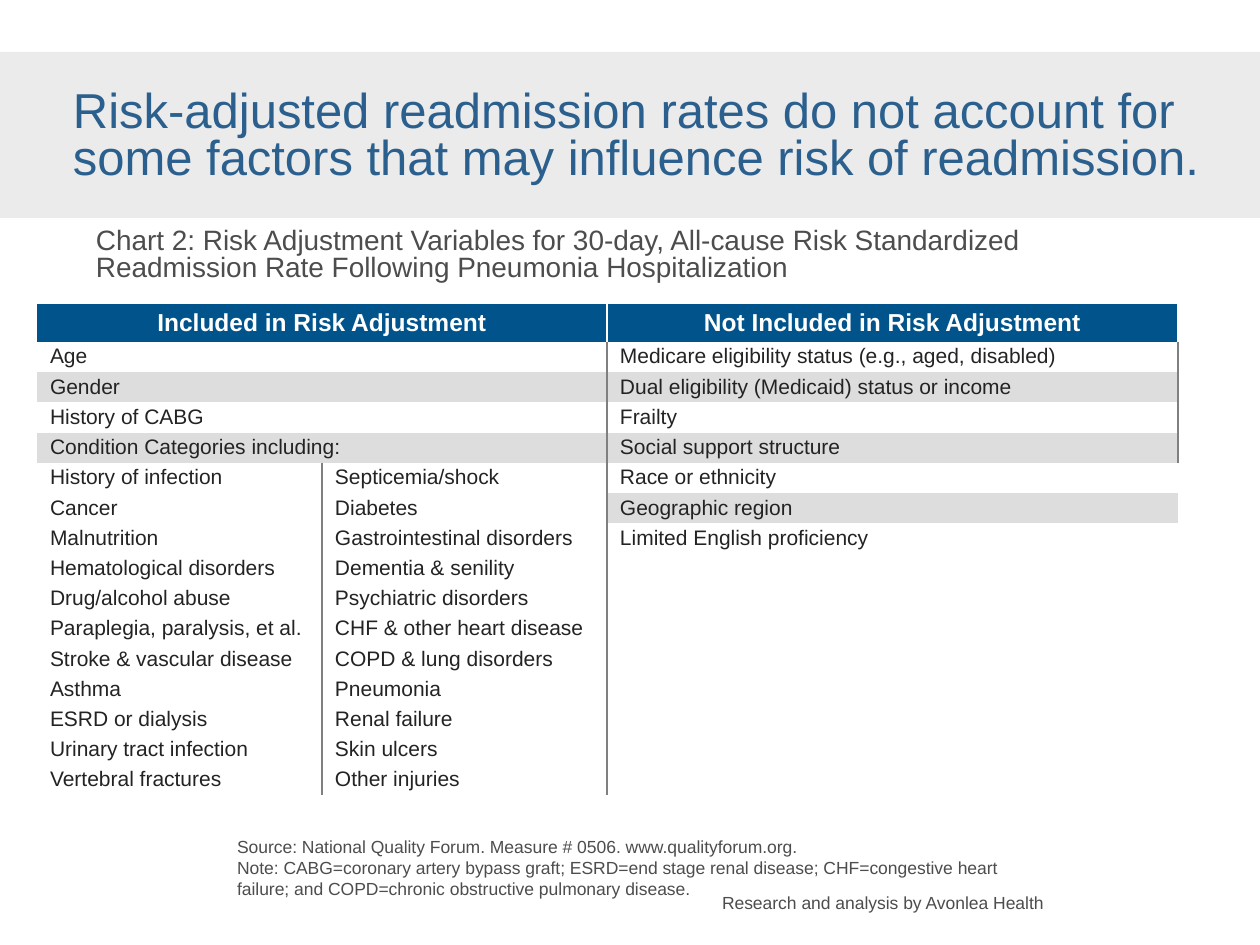
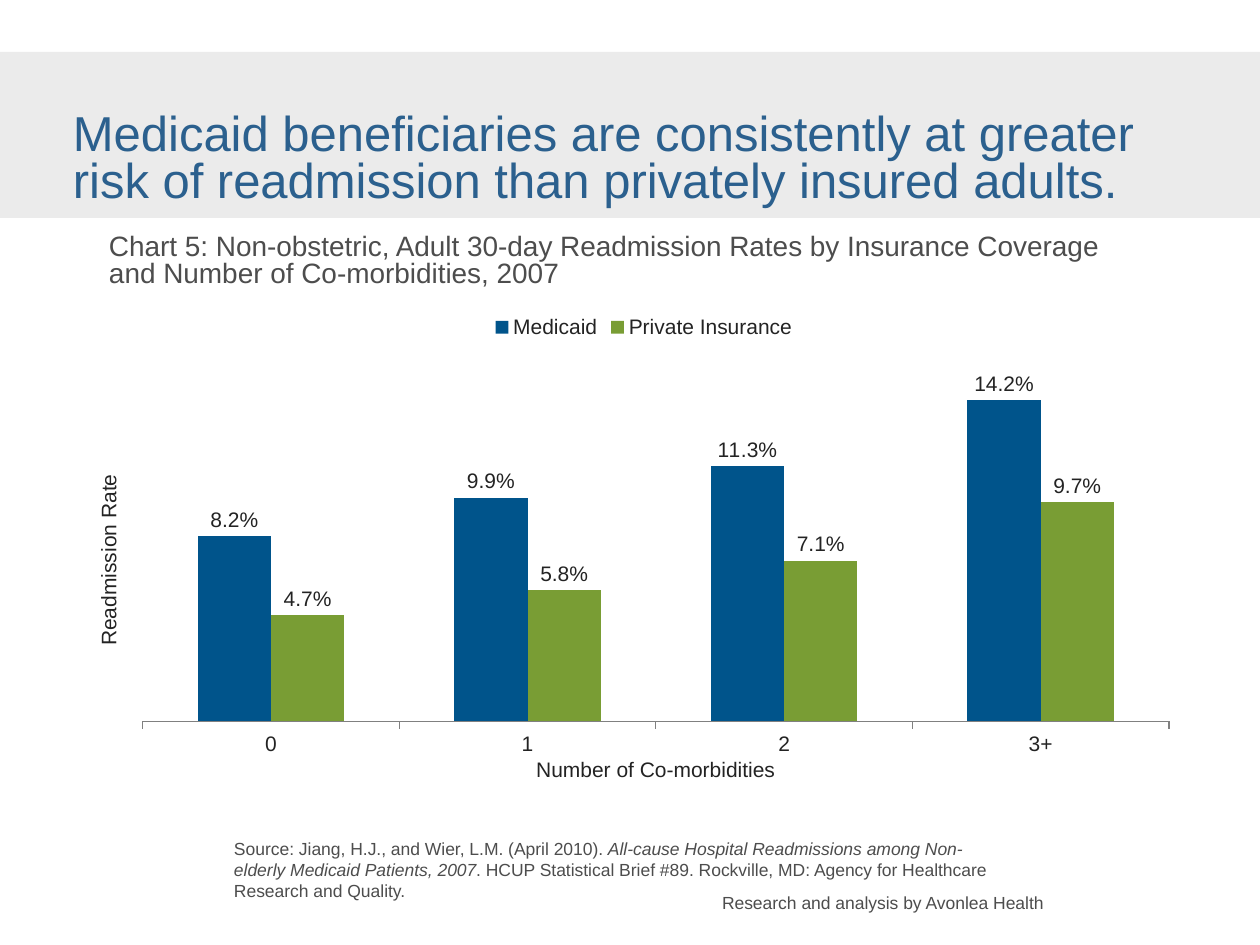
import pptx
import pptx.chart.data
import pptx.dml.color
import pptx.enum.chart
import pptx.enum.shapes
import pptx.enum.text
import pptx.oxml
import pptx.oxml.ns
import pptx.util

RGB = pptx.dml.color.RGBColor
BAND = RGB(0xEB, 0xEB, 0xEB)
TITLE = RGB(0x2B, 0x60, 0x8E)
GREY_TEXT = RGB(0x4D, 0x4D, 0x4D)
BODY = RGB(0x23, 0x23, 0x23)
BLUE = RGB(0x00, 0x54, 0x8B)
GREEN = RGB(0x79, 0x9D, 0x34)
STRIPE = RGB(0xDD, 0xDD, 0xDD)
RULE = RGB(0x80, 0x80, 0x80)
WHITE = RGB(0xFF, 0xFF, 0xFF)
FONT = "Arial"
PX_PER_INCH = 126
SLIDE_W, SLIDE_H = 1260, 945
NO_STYLE = "{2D5ABB26-0587-4C30-8999-92F81FD0307C}"

# Paragraphs are lists of (text, italic) runs.
FOOTER = "Research and analysis by Avonlea Health"
FACTORS = {
    "title": "Risk-adjusted readmission rates do not account for some factors "
             "that may influence risk of readmission.",
    "title_top": 91,
    "caption": "Chart 2: Risk Adjustment Variables for 30-day, All-cause Risk "
               "Standardized Readmission Rate Following Pneumonia Hospitalization",
    "caption_at": (96, 229),
    "source": [
        [("Source: National Quality Forum. Measure # 0506. www.qualityforum.org.", False)],
        [("Note: CABG=coronary artery bypass graft; ESRD=end stage renal disease; "
          "CHF=congestive heart failure; and COPD=chronic obstructive pulmonary "
          "disease.", False)],
    ],
    "source_at": (237, 836),
}
RATES = {
    "title": "Medicaid beneficiaries are consistently at greater risk of "
             "readmission than privately insured adults.",
    "title_top": 114,
    "caption": "Chart 5: Non-obstetric, Adult 30-day Readmission Rates by Insurance "
               "Coverage and Number of Co-morbidities, 2007",
    "caption_at": (109, 235),
    "source": [[
        ("Source: Jiang, H.J., and Wier, L.M. (April 2010). ", False),
        ("All-cause Hospital Readmissions among Non-elderly Medicaid Patients, 2007", True),
        (". HCUP Statistical Brief #89. Rockville, MD: Agency for Healthcare "
         "Research and Quality.", False),
    ]],
    "source_at": (234, 838),
}

HEADERS = ("Included in Risk Adjustment", "Not Included in Risk Adjustment")
INCLUDED = ["Age", "Gender", "History of CABG", "Condition Categories including:"]
CONDITIONS = [
    ("History of infection", "Septicemia/shock"),
    ("Cancer", "Diabetes"),
    ("Malnutrition", "Gastrointestinal disorders"),
    ("Hematological disorders", "Dementia & senility"),
    ("Drug/alcohol abuse", "Psychiatric disorders"),
    ("Paraplegia, paralysis, et al.", "CHF & other heart disease"),
    ("Stroke & vascular disease", "COPD & lung disorders"),
    ("Asthma", "Pneumonia"),
    ("ESRD or dialysis", "Renal failure"),
    ("Urinary tract infection", "Skin ulcers"),
    ("Vertebral fractures", "Other injuries"),
]
NOT_INCLUDED = [
    "Medicare eligibility status (e.g., aged, disabled)",
    "Dual eligibility (Medicaid) status or income",
    "Frailty",
    "Social support structure",
    "Race or ethnicity",
    "Geographic region",
    "Limited English proficiency",
]
TABLE_AT = (37, 304, 1141, 485)
COL_W = (285, 285, 571)
HEADER_H = 38

COMORBIDITIES = ["0", "1", "2", "3+"]
SERIES = [
    ("Medicaid", (0.082, 0.099, 0.113, 0.142), BLUE),
    ("Private Insurance", (0.047, 0.058, 0.071, 0.097), GREEN),
]
CHART_AT = (77, 302, 1134, 486)
PLOT_LAYOUT = {"layoutTarget": "inner", "xMode": "edge", "yMode": "edge",
               "x": 0.058, "y": 0.119, "w": 0.905, "h": 0.744}
RATE_TITLE_LAYOUT = {"xMode": "edge", "yMode": "edge", "x": 0.013, "y": 0.347}


def px(n):
    return pptx.util.Emu(round(n * 914400 / PX_PER_INCH))


def box(at):
    return [px(n) for n in at]


def style(font, size, color, bold=False, italic=False):
    font.name, font.size = FONT, pptx.util.Pt(size)
    font.bold, font.italic = bold, italic
    font.color.rgb = color


def write(tf, text, size=10, color=GREY_TEXT, bold=False, align=None, spacing=None):
    """Fill a text frame with one string or with paragraphs of (text, italic) runs."""
    paragraphs = [[(text, False)]] if isinstance(text, str) else text
    for i, runs in enumerate(paragraphs):
        p = tf.paragraphs[0] if i == 0 else tf.add_paragraph()
        p.alignment, p.line_spacing = align, spacing
        for words, italic in runs:
            if words:
                r = p.add_run()
                r.text = words
                style(r.font, size, color, bold, italic)
        p._p.get_or_add_endParaRPr().set("sz", str(size * 100))


def add_text(s, at, text, **fmt):
    tf = s.shapes.add_textbox(*box(at)).text_frame
    tf.word_wrap = True
    tf.margin_left = tf.margin_right = tf.margin_top = tf.margin_bottom = 0
    write(tf, text, **fmt)


def add_framed_slide(prs, page):
    """Add a slide with its band, title, caption, source and footer."""
    s = prs.slides.add_slide(prs.slide_layouts[6])
    band = s.shapes.add_shape(pptx.enum.shapes.MSO_SHAPE.RECTANGLE,
                              *box((0, 52, SLIDE_W, 166)))
    band.shadow.inherit = False
    band.fill.solid()
    band.fill.fore_color.rgb = BAND
    band.line.fill.background()
    add_text(s, (722, 892, 333, 21), FOOTER)
    add_text(s, (73, page["title_top"], 1134, 94), page["title"],
             size=28, color=TITLE, spacing=0.8)
    add_text(s, (*page["caption_at"], 1030, 54), page["caption"], size=16, spacing=0.8)
    add_text(s, (*page["source_at"], 765, 63), page["source"])
    return s


def set_left_border(cell, color):
    ln = pptx.oxml.parse_xml(
        f'<a:lnL {pptx.oxml.ns.nsdecls("a")} w="12700"><a:solidFill>'
        f'<a:srgbClr val="{color}"/></a:solidFill></a:lnL>')
    cell._tc.get_or_add_tcPr().insert(0, ln)


def fill_cell(cell, text, fill=None, **fmt):
    cell.margin_left = cell.margin_right = px(13)
    cell.margin_top, cell.margin_bottom = px(2), px(3)
    cell.vertical_anchor = pptx.enum.text.MSO_ANCHOR.MIDDLE
    if fill is None:
        cell.fill.background()
    else:
        cell.fill.solid()
        cell.fill.fore_color.rgb = fill
    write(cell.text_frame, text, **fmt)


def add_factor_table(s):
    left = [(name, "") for name in INCLUDED] + CONDITIONS
    right = NOT_INCLUDED + [""] * (len(left) - len(NOT_INCLUDED))
    rows = [(HEADERS[0], "", HEADERS[1])]
    rows += [(*pair, factor) for pair, factor in zip(left, right)]
    table = s.shapes.add_table(len(rows), len(COL_W), *box(TABLE_AT)).table
    table._tbl.tblPr.find(pptx.oxml.ns.qn("a:tableStyleId")).text = NO_STYLE
    table.first_row = table.horz_banding = False
    for col, width in zip(table.columns, COL_W):
        col.width = px(width)
    row_h = (TABLE_AT[3] - HEADER_H) / len(left)
    for i, row in enumerate(rows):
        table.rows[i].height = px(row_h if i else HEADER_H)
        merged = i <= len(INCLUDED)
        for j, text in enumerate(row):
            cell = table.cell(i, j)
            if i == 0:
                fill_cell(cell, text, BLUE, size=14, color=WHITE, bold=True,
                          align=pptx.enum.text.PP_ALIGN.CENTER)
            else:
                striped = i % 2 == 0 and (merged or (j == 2 and text))
                fill_cell(cell, text, STRIPE if striped else None, size=12, color=BODY)
            if j == 2 or (j == 1 and not merged):
                set_left_border(cell, RULE if i else WHITE)
        if merged:
            table.cell(i, 0).merge(table.cell(i, 1))


def set_layout(parent, values, index):
    """Place a chart part by hand, in fractions of the chart."""
    for old in parent.findall(pptx.oxml.ns.qn("c:layout")):
        parent.remove(old)
    parts = "".join(f'<c:{k} val="{v}"/>' for k, v in values.items())
    parent.insert(index, pptx.oxml.parse_xml(
        f'<c:layout {pptx.oxml.ns.nsdecls("c")}><c:manualLayout>{parts}'
        '</c:manualLayout></c:layout>'))


def add_rate_chart(s):
    xl = pptx.enum.chart
    data = pptx.chart.data.CategoryChartData(number_format="0.0%")
    data.categories = COMORBIDITIES
    for name, values, _ in SERIES:
        data.add_series(name, values)
    chart = s.shapes.add_chart(xl.XL_CHART_TYPE.COLUMN_CLUSTERED,
                               *box(CHART_AT), data).chart
    style(chart.font, 12, BODY)
    chart.has_title = False
    chart.has_legend = True
    chart.legend.position = xl.XL_LEGEND_POSITION.TOP
    chart.legend.include_in_layout = False
    style(chart.legend.font, 12, BODY)

    plot = chart.plots[0]
    plot.gap_width, plot.overlap, plot.vary_by_categories = 150, 0, False
    for series, (_, _, color) in zip(plot.series, SERIES):
        series.format.fill.solid()
        series.format.fill.fore_color.rgb = color
        labels = series.data_labels
        labels.show_value = True
        labels.position = xl.XL_LABEL_POSITION.OUTSIDE_END
        labels.number_format, labels.number_format_is_linked = "0.0%", False
        style(labels.font, 12, BODY)

    cat, val = chart.category_axis, chart.value_axis
    for axis, title in ((cat, "Number of Co-morbidities"), (val, "Readmission Rate")):
        axis.has_major_gridlines = False
        write(axis.axis_title.text_frame, title, size=12, color=BODY)
    cat.major_tick_mark = xl.XL_TICK_MARK.OUTSIDE
    cat.format.line.color.rgb = RULE
    style(cat.tick_labels.font, 12, BODY)
    val.minimum_scale, val.maximum_scale = 0, 0.16
    val.major_tick_mark = xl.XL_TICK_MARK.NONE
    val.tick_label_position = xl.XL_TICK_LABEL_POSITION.NONE
    val.format.line.fill.background()
    val.axis_title.text_frame._txBody.bodyPr.set("rot", "-5400000")
    set_layout(val.axis_title._element, RATE_TITLE_LAYOUT, 1)
    set_layout(chart._chartSpace.chart.plotArea, PLOT_LAYOUT, 0)


def main():
    prs = pptx.Presentation()
    prs.slide_width, prs.slide_height = px(SLIDE_W), px(SLIDE_H)
    add_factor_table(add_framed_slide(prs, FACTORS))
    add_rate_chart(add_framed_slide(prs, RATES))
    prs.save("out.pptx")


if __name__ == "__main__":
    main()
